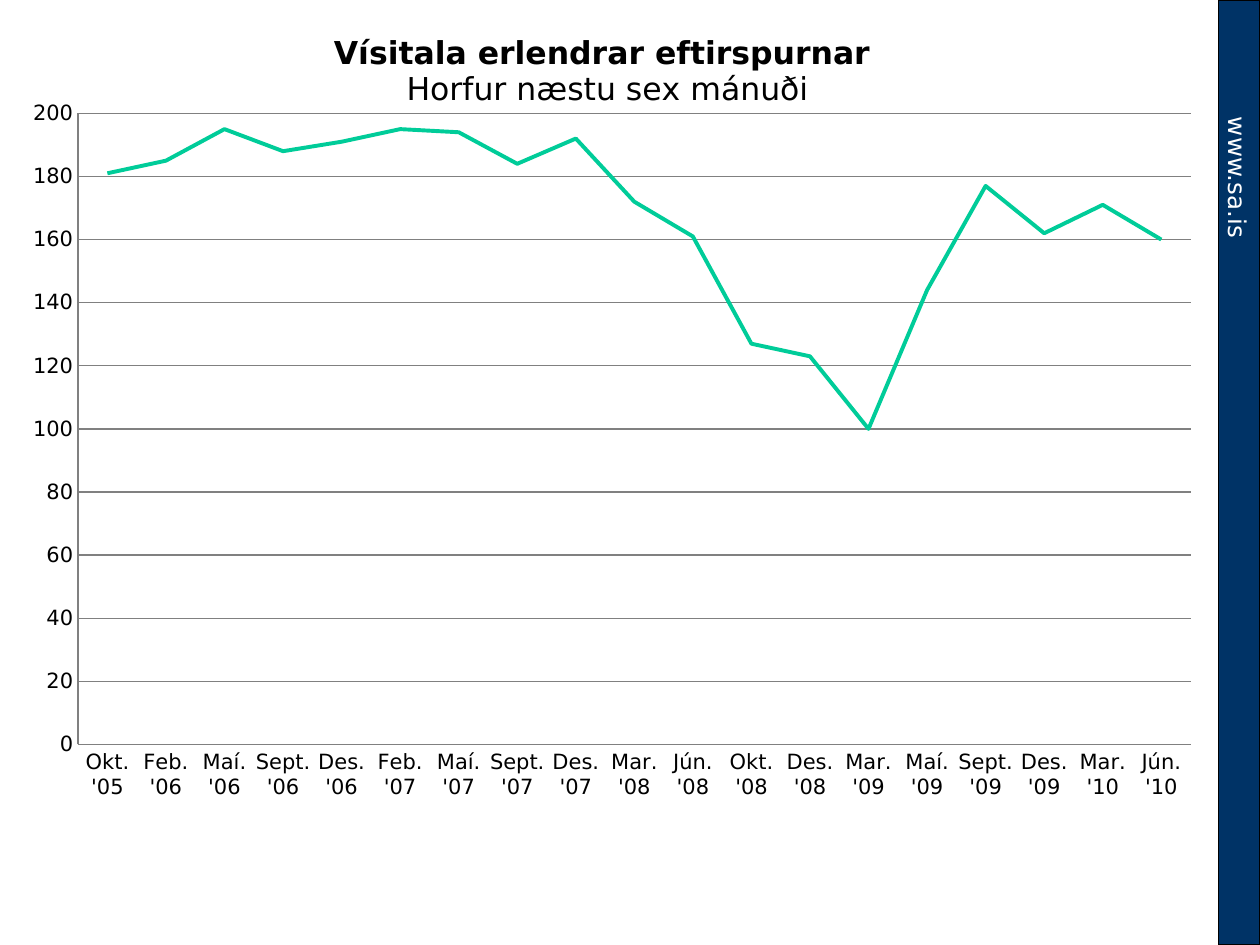
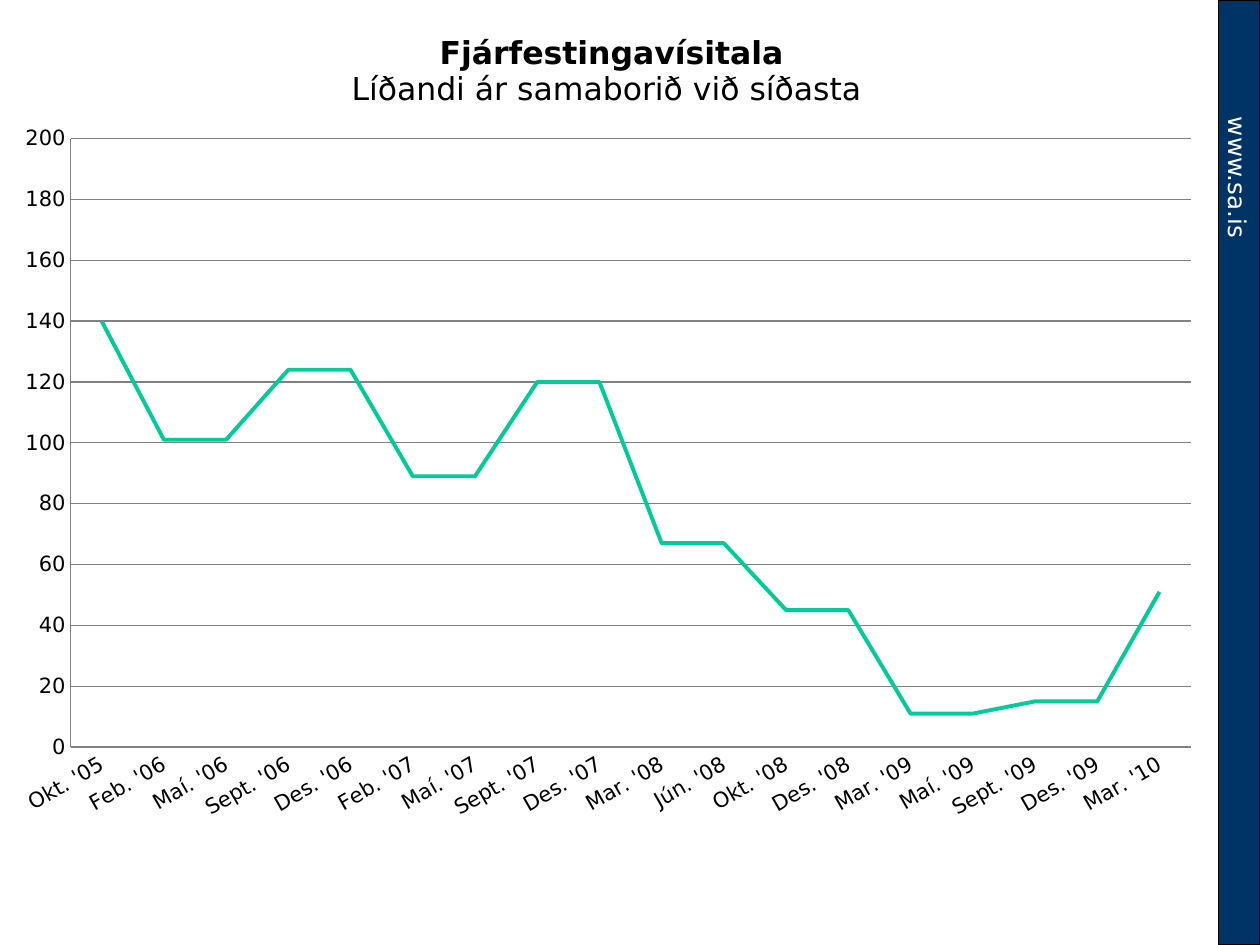
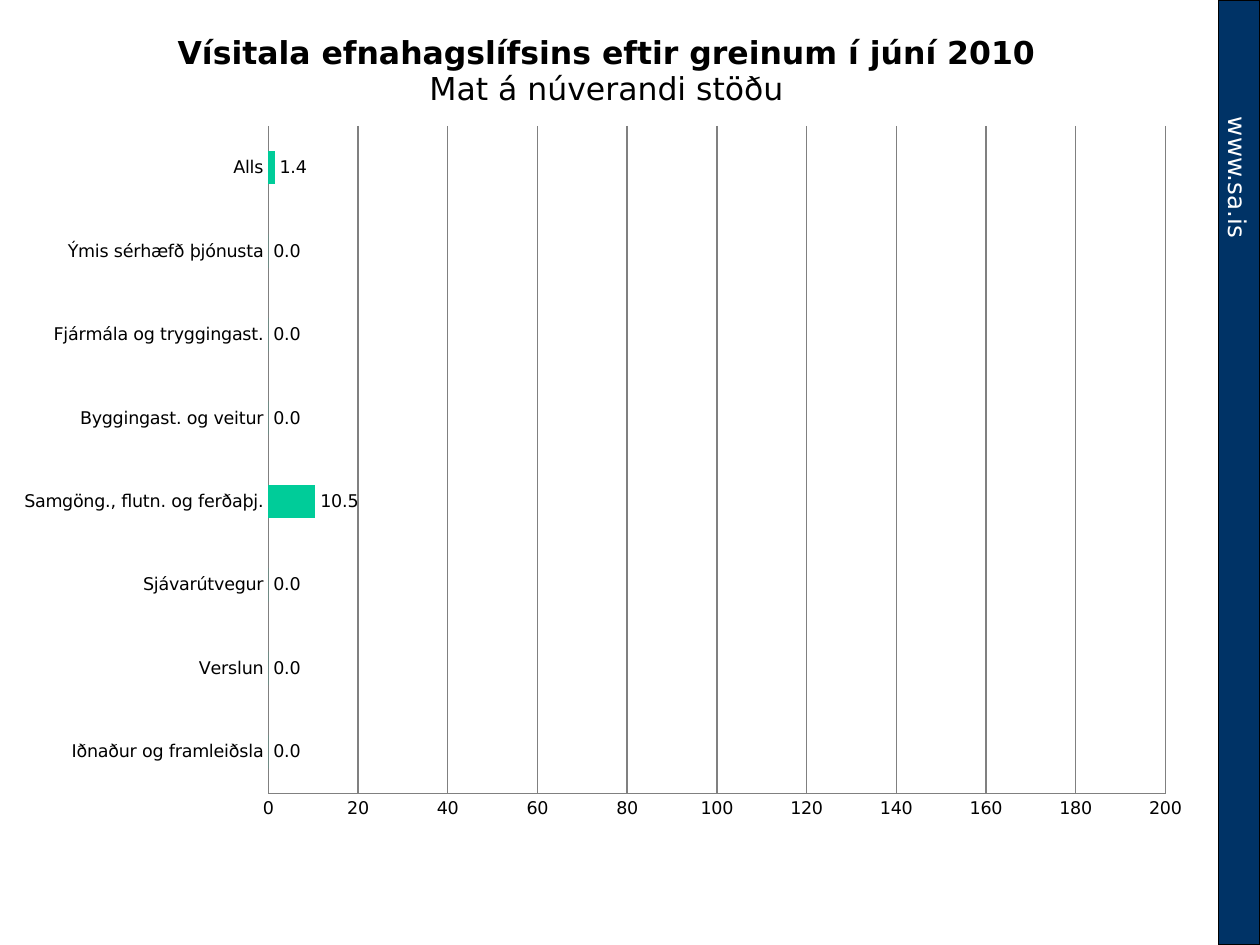
from lxml.etree import SubElement
from pptx import Presentation
from pptx.chart.data import CategoryChartData
from pptx.dml.color import RGBColor
from pptx.enum.chart import XL_CHART_TYPE, XL_LABEL_POSITION, XL_TICK_MARK
from pptx.enum.shapes import MSO_SHAPE
from pptx.oxml import parse_xml
from pptx.oxml.ns import nsdecls, qn
from pptx.util import Inches, Pt

COLORS = {"navy": "003366", "green": "00CC99", "grid": "808080",
          "black": "000000", "white": "FFFFFF"}
FONT = "DejaVu Sans"
SLIDE_WIDTH, SLIDE_HEIGHT = 10, 7.5
BAND_WIDTH = 0.33
TITLE_TOP = 0.23
ADDRESS = "www.sa.is"

SURVEYS = ["Okt. '05", "Feb. '06", "Maí. '06", "Sept. '06", "Des. '06", "Feb. '07",
           "Maí. '07", "Sept. '07", "Des. '07", "Mar. '08", "Jún. '08", "Okt. '08",
           "Des. '08", "Mar. '09", "Maí. '09", "Sept. '09", "Des. '09", "Mar. '10",
           "Jún. '10"]

# Sizes and plot areas (left, top, width, height) are in inches.
CHARTS = [
    {"title": ["Vísitala erlendrar eftirspurnar ", "Horfur næstu sex mánuði"],
     "type": XL_CHART_TYPE.LINE, "size": (9.57, 6.63), "title_left": 2.62,
     "plot": (0.62, 0.9, 8.83, 5.01), "axis_size": 12, "label_angle": 0,
     "categories": SURVEYS,
     "values": [181, 185, 195, 188, 191, 195, 194, 184, 192, 172, 161, 127, 123,
                100, 144, 177, 162, 171, 160]},
    {"title": ["Fjárfestingavísitala", "Líðandi ár samaborið við síðasta "],
     "type": XL_CHART_TYPE.LINE, "size": (9.65, 6.64), "title_left": 2.76,
     "plot": (0.56, 1.1, 8.89, 4.83), "axis_size": 12, "label_angle": -30,
     "categories": SURVEYS[:-1],
     "values": [140, 101, 101, 124, 124, 89, 89, 120, 120, 67, 67, 45, 45, 11, 11,
                15, 15, 51]},
    {"title": ["Vísitala efnahagslífsins eftir greinum í júní 2010",
               "Mat á núverandi stöðu"],
     "type": XL_CHART_TYPE.BAR_CLUSTERED, "size": (9.57, 6.63), "title_left": 1.38,
     "plot": (2.13, 1, 7.12, 5.3), "axis_size": 10, "label_angle": 0,
     "categories": ["Iðnaður og framleiðsla", "Verslun", "Sjávarútvegur",
                    "Samgöng., flutn. og ferðaþj.", "Byggingast. og veitur",
                    "Fjármála og tryggingast.", "Ýmis sérhæfð þjónusta", "Alls"],
     "values": [0, 0, 0, 10.5, 0, 0, 0, 1.4]},
]


def color(name):
    return RGBColor.from_string(COLORS[name])


def set_font(font, size, shade="black", bold=False):
    for name, value in {"name": FONT, "size": Pt(size), "bold": bold}.items():
        setattr(font, name, value)
    font.color.rgb = color(shade)


def set_line(line, shade, width):
    line.color.rgb = color(shade)
    line.width = Pt(width)


def add_master_band(deck, page):
    """Draw the side band on a page, then move it to the slide master."""
    band_left = SLIDE_WIDTH - BAND_WIDTH
    band = page.shapes.add_shape(MSO_SHAPE.RECTANGLE, Inches(band_left), 0,
                                 Inches(BAND_WIDTH), Inches(SLIDE_HEIGHT))
    band.shadow.inherit = False
    band.fill.solid()
    band.fill.fore_color.rgb = color("navy")
    set_line(band.line, "black", 0.75)

    box = page.shapes.add_textbox(Inches(8.91), Inches(1.58),
                                  Inches(1.83), Inches(BAND_WIDTH))
    box.rotation = 90
    box.text_frame.word_wrap = True
    box.text_frame.text = ADDRESS
    set_font(box.text_frame.paragraphs[0].runs[0].font, 14, "white")

    for shape in (band, box):
        deck.slide_master.element.cSld.spTree.append(shape.element)


def place(part, index, size, rect, inner=False):
    """Give a chart part a manual layout; rect is in inches within the chart."""
    for old in part.findall(qn("c:layout")):
        part.remove(old)
    layout = parse_xml(f"<c:layout {nsdecls('c')}><c:manualLayout/></c:layout>")
    settings = [("layoutTarget", "inner")] if inner else []
    settings += [("xMode", "edge"), ("yMode", "edge")]
    settings += [(key, str(length / size[i % 2]))
                 for i, (key, length) in enumerate(zip("xywh", rect))]
    for key, value in settings:
        SubElement(layout[0], qn(f"c:{key}")).set("val", value)
    part.insert(index, layout)


def format_title(chart, item):
    frame = chart.chart_title.text_frame
    frame.text = "\n".join(item["title"])
    for para, bold in zip(frame.paragraphs, (True, False)):
        set_font(para.runs[0].font, 18, bold=bold)
    place(chart.chart_title.element if hasattr(chart.chart_title, "element")
          else chart.element.find(".//" + qn("c:title")),
          1, item["size"], (item["title_left"], TITLE_TOP))


def format_axes(chart, item):
    for axis in (chart.category_axis, chart.value_axis):
        axis.major_tick_mark = axis.minor_tick_mark = XL_TICK_MARK.NONE
        set_font(axis.tick_labels.font, item["axis_size"])
        set_line(axis.format.line, "grid", 0.75)
    label_body = chart.category_axis.element.find(
        qn("c:txPr") + "/" + qn("a:bodyPr")) if hasattr(
        chart.category_axis, "element") else chart.element.find(
        ".//" + qn("c:catAx") + "/" + qn("c:txPr") + "/" + qn("a:bodyPr"))
    label_body.set("rot", str(item["label_angle"] * 60000))

    scale = {"minimum_scale": 0, "maximum_scale": 200, "major_unit": 20,
             "has_major_gridlines": True}
    for name, value in scale.items():
        setattr(chart.value_axis, name, value)
    set_line(chart.value_axis.major_gridlines.format.line, "grid", 0.75)
    chart.value_axis.tick_labels.number_format = "0"
    chart.value_axis.tick_labels.number_format_is_linked = False


def format_series(chart, item):
    plot = chart.plots[0]
    plot.vary_by_categories = False
    series = plot.series[0]
    if item["type"] == XL_CHART_TYPE.LINE:
        series.smooth = False
        set_line(series.format.line, "green", 2.25)
        return
    plot.gap_width = 150
    series.format.fill.solid()
    series.format.fill.fore_color.rgb = color("green")
    plot.has_data_labels = True
    labels = {"show_value": True, "number_format": "0.0",
              "number_format_is_linked": False,
              "position": XL_LABEL_POSITION.OUTSIDE_END}
    for name, value in labels.items():
        setattr(plot.data_labels, name, value)
    set_font(plot.data_labels.font, 10)


def add_index_chart(page, item):
    data = CategoryChartData()
    data.categories = item["categories"]
    data.add_series("Series 1", item["values"])
    width, height = item["size"]
    chart = page.shapes.add_chart(item["type"], 0, 0, Inches(width),
                                  Inches(height), data).chart
    chart.has_legend = False
    set_font(chart.font, 10)
    format_title(chart, item)
    format_axes(chart, item)
    format_series(chart, item)
    plot_area = chart.element.find(".//" + qn("c:plotArea")) if hasattr(
        chart, "element") else chart.plots[0].element.getparent()
    place(plot_area, 0, item["size"], item["plot"], inner=True)


def main():
    deck = Presentation()
    deck.slide_width, deck.slide_height = Inches(SLIDE_WIDTH), Inches(SLIDE_HEIGHT)
    blank = deck.slide_layouts[6]
    for number, item in enumerate(CHARTS):
        page = deck.slides.add_slide(blank)
        if number == 0:
            add_master_band(deck, page)
        add_index_chart(page, item)
    deck.save("out.pptx")


if __name__ == "__main__":
    main()
